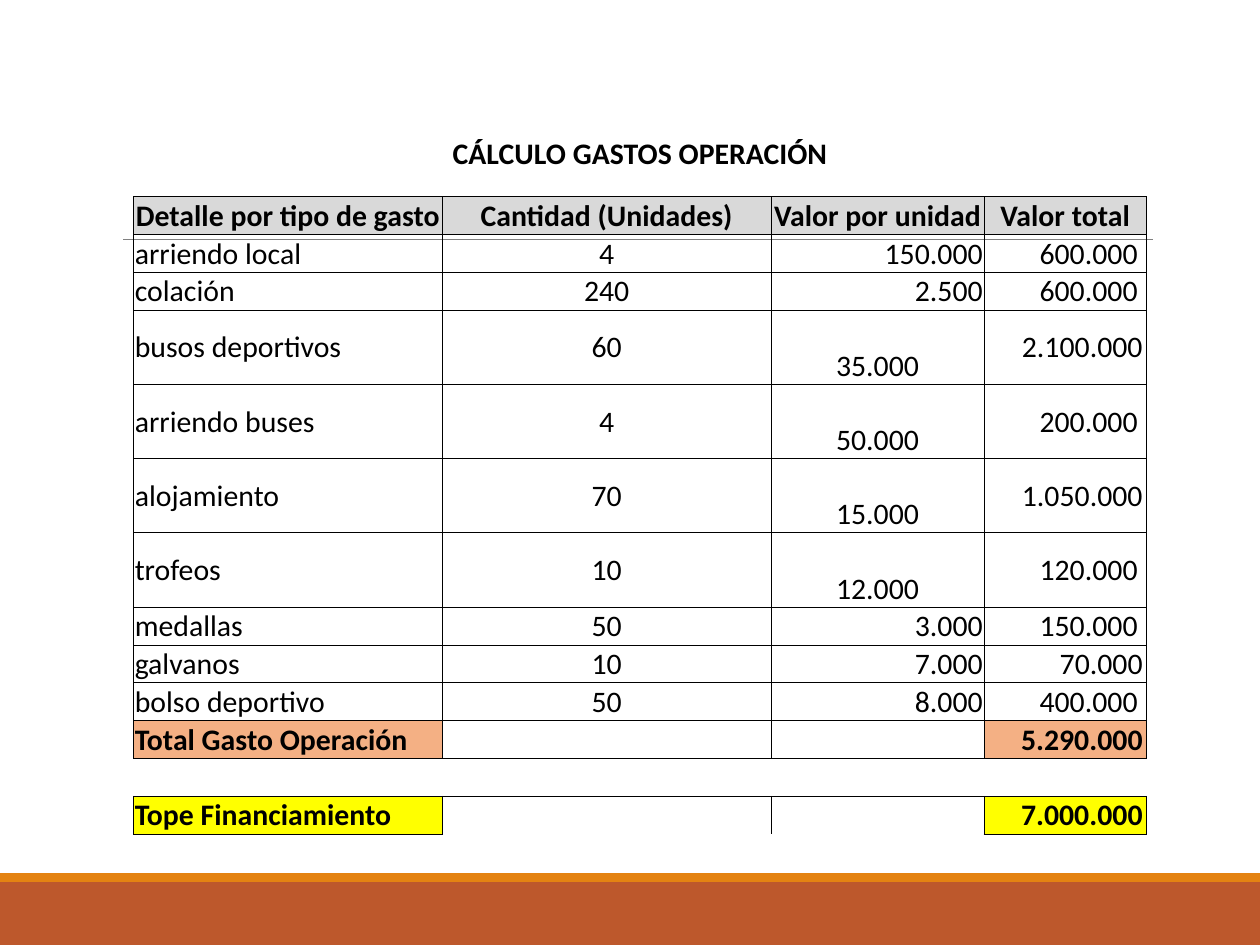
from lxml import etree
from pptx import Presentation, util as u
from pptx.dml.color import RGBColor
from pptx.enum import shapes, text
from pptx.oxml import ns

HUES = {"ink": "000000", "rust": "BD582C", "amber": "E48312", "rule": "808080",
        "head": "D9D9D9", "total": "F4B084", "cap": "FFFF00"}
WIDE, HIGH = 10, 7.5
PLAIN = "{2D5ABB26-0587-4C30-8999-92F81FD0307C}"
LEFT, MID, RIGHT = text.PP_ALIGN.LEFT, text.PP_ALIGN.CENTER, text.PP_ALIGN.RIGHT
CENTRE, BASE = text.MSO_ANCHOR.MIDDLE, text.MSO_ANCHOR.BOTTOM
COLS = [2.45, 2.61, 1.69, 1.29]
SHORT, TALL = 0.3, 0.59
HEADS = ["Detalle por tipo de gasto", "Cantidad (Unidades)", "Valor por unidad", "Valor total"]
COSTS = [
    ("arriendo local", "4", "150.000", "600.000"),
    ("colación", "240", "2.500", "600.000"),
    ("busos deportivos", "60", "35.000", "2.100.000"),
    ("arriendo buses", "4", "50.000", "200.000"),
    ("alojamiento", "70", "15.000", "1.050.000"),
    ("trofeos", "10", "12.000", "120.000"),
    ("medallas", "50", "3.000", "150.000"),
    ("galvanos", "10", "7.000", "70.000"),
    ("bolso deportivo", "50", "8.000", "400.000"),
]


def tint(name):
    return RGBColor.from_string(HUES[name])


def write(cell, words, align=MID, anchor=CENTRE, bold=False, size=17, pad=0.01):
    cell.margin_left = cell.margin_top = u.Inches(0.01)
    cell.margin_right, cell.margin_bottom = u.Inches(pad), 0
    cell.vertical_anchor = anchor
    para = cell.text_frame.paragraphs[0]
    para.alignment = align
    if not words:
        end = etree.SubElement(para._p, ns.qn("a:endParaRPr"))
        end.set("sz", str(size * 100))
        return
    run = para.add_run()
    run.text = words
    font = run.font
    font.name, font.size, font.bold = "Calibri", u.Pt(size), bold
    font.color.rgb = tint("ink")


class Deck:
    def __init__(self):
        self.show = Presentation()
        self.show.slide_width, self.show.slide_height = u.Inches(WIDE), u.Inches(HIGH)
        self.slide = self.show.slides.add_slide(self.show.slide_layouts[6])

    def spot(self, x, y):
        return int(x * self.show.slide_width), int(y * self.show.slide_height)

    def bar(self, top, tall, hue):
        box = self.slide.shapes.add_shape(
            shapes.MSO_SHAPE.RECTANGLE, *self.spot(0, top), *self.spot(1, tall))
        box.shadow.inherit = False
        box.fill.solid()
        box.fill.fore_color.rgb = tint(hue)
        box.line.fill.background()

    def rule(self, x, y, end):
        line = self.slide.shapes.add_connector(
            shapes.MSO_CONNECTOR.STRAIGHT, *self.spot(x, y), *self.spot(end, y))
        line.line.color.rgb, line.line.width = tint("rule"), u.Pt(0.5)
        etree.SubElement(line.element.spPr, ns.qn("a:effectLst"))

    def grid(self, x, y, cols, rows):
        size = self.spot(sum(cols) / WIDE, sum(rows) / HIGH)
        frame = self.slide.shapes.add_table(len(rows), len(cols), *self.spot(x, y), *size)
        table = frame.table
        table.first_row = table.horz_banding = False
        next(frame.element.iter(ns.qn("a:tableStyleId"))).text = PLAIN
        for col, wide in zip(table.columns, cols):
            col.width = u.Inches(wide)
        for row, tall in zip(table.rows, rows):
            row.height = u.Inches(tall)
        return table

    def cell(self, cell, words="", sides="LRTB", hue=None, **look):
        write(cell, words, **look)
        props = cell._tc.get_or_add_tcPr()
        for side in sides:
            edge = etree.SubElement(props, ns.qn("a:ln" + side), w=str(u.Pt(0.5)))
            paint = etree.SubElement(edge, ns.qn("a:solidFill"))
            etree.SubElement(paint, ns.qn("a:srgbClr"), val=HUES["ink"])
        if hue:
            cell.fill.solid()
            cell.fill.fore_color.rgb = tint(hue)
        else:
            cell.fill.background()

    def sum(self, table, row, name, value, hue, inner):
        self.cell(table.cell(row, 0), name, hue=hue, bold=True, align=LEFT)
        for col, sides in enumerate(inner, 1):
            self.cell(table.cell(row, col), sides=sides)
        self.cell(table.cell(row, 3), value, hue=hue, bold=True, align=RIGHT, pad=0.03)


def main():
    deck = Deck()
    deck.bar(7 / HIGH, 0.5 / HIGH, "rust")
    deck.bar(6.93 / HIGH, 0.07 / HIGH, "amber")
    deck.rule(0.098, 1.9 / HIGH, 0.915)

    lows = [len(cost[2]) == 6 for cost in COSTS]
    rows = [SHORT, 0.19, SHORT] + [TALL if low else SHORT for low in lows] + [SHORT] * 3
    table = deck.grid(0.106, 1.07 / HIGH, COLS, rows)
    table.cell(0, 0).merge(table.cell(0, 3))
    deck.cell(table.cell(0, 0), "CÁLCULO GASTOS OPERACIÓN", "", bold=True, anchor=BASE)
    for col, head in enumerate(HEADS):
        deck.cell(table.cell(1, col), sides="B", size=9)
        deck.cell(table.cell(2, col), head, hue="head", bold=True)

    for row, (cost, low) in enumerate(zip(COSTS, lows), 3):
        name, count, price, total = cost
        deck.cell(table.cell(row, 0), name, align=LEFT)
        deck.cell(table.cell(row, 1), count)
        deck.cell(table.cell(row, 2), price, align=MID if low else RIGHT,
                  anchor=BASE if low else CENTRE)
        deck.cell(table.cell(row, 3), total, align=RIGHT, pad=0.07 if len(total) == 7 else 0.03)

    last = len(rows) - 1
    deck.sum(table, last - 2, "Total Gasto Operación", "5.290.000", "total", ["LRTB", "LRTB"])
    for col, sides in enumerate(["TB", "T", "T", "TB"]):
        deck.cell(table.cell(last - 1, col), sides=sides)
    deck.sum(table, last, "Tope Financiamiento", "7.000.000", "cap", ["L", "R"])
    deck.show.save("out.pptx")


if __name__ == "__main__":
    main()
